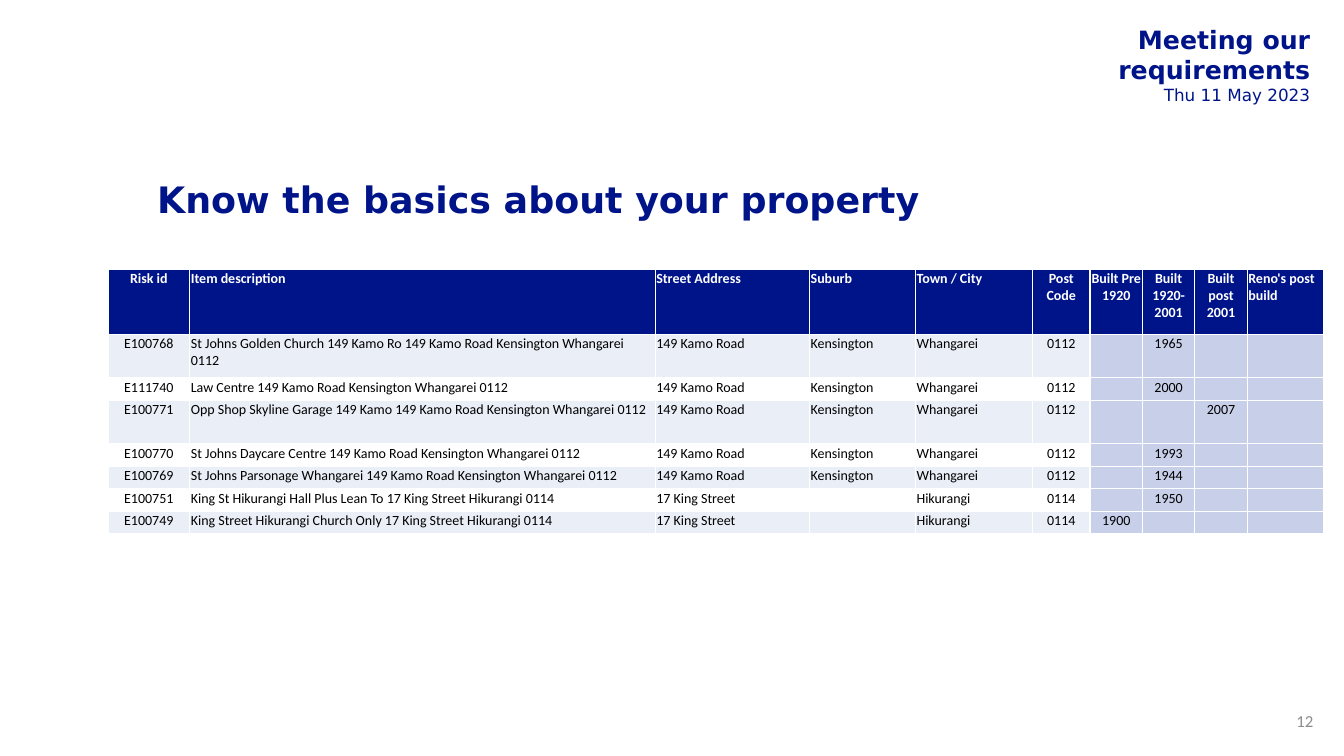
from lxml.etree import SubElement as Sub
from pptx import Presentation
from pptx.dml.color import RGBColor as RGB
from pptx.enum.text import MSO_ANCHOR as Anchor, PP_ALIGN as Align
from pptx.oxml.ns import qn
from pptx.util import Cm, Pt

NAVY = RGB(0x00, 0x14, 0x89)
WHITE = RGB(0xFF, 0xFF, 0xFF)
BLACK = RGB(0x00, 0x00, 0x00)
GREY = RGB(0x8C, 0x8C, 0x8C)
BAND = RGB(0xEA, 0xEF, 0xF7)
BLUE = RGB(0xC7, 0xCF, 0xE9)

deck = Presentation()
deck.slide_width, deck.slide_height = Cm(33.87), Cm(19.05)
slide = deck.slides.add_slide(deck.slide_layouts[6])


def style(para, face, size, color, bold=False, align=Align.LEFT):
    para.alignment = align
    for run in para.runs:
        font = run.font
        font.name, font.size, font.bold = face, Pt(size), bold
        font.color.rgb = color


def add_text(text, left, top, width, height, anchor=Anchor.MIDDLE):
    box = slide.shapes.add_textbox(Cm(left), Cm(top), Cm(width), Cm(height))
    frame = box.text_frame
    frame.word_wrap, frame.vertical_anchor = True, anchor
    frame.text = text
    return frame


# Meeting name and date, top right
head = add_text("Meeting our requirements\nThu 11 May 2023",
                23.42, 0.51, 9.78, 2.24, Anchor.TOP)
head.margin_left, head.margin_right = Cm(0.5), Cm(0.18)
head.margin_top = head.margin_bottom = Cm(0.1)
name, date = head.paragraphs
style(name, "DejaVu Sans", 18, NAVY, True, Align.RIGHT)
style(date, "DejaVu Sans", 12, NAVY, False, Align.RIGHT)

# Title
title = add_text("Know the basics about your property", 3.71, 3.81, 28.45, 2.57)
title.paragraphs[0].line_spacing = 0.9
style(title.paragraphs[0], "DejaVu Sans", 26, NAVY, True)

# Slide number
page = add_text("12", 32.28, 17.65, 1.07, 1.02)
style(page.paragraphs[0], "Calibri", 12, GREY, align=Align.RIGHT)

# Property table: the last four columns hold the building dates
KAMO = ["149 Kamo Road", "Kensington", "Whangarei", "0112"]
KING = ["17 King Street", "", "Hikurangi", "0114"]
rows = [
    ["Risk id", "Item description", "Street Address", "Suburb", "Town / City",
     "Post Code", "Built Pre 1920", "Built 1920-2001", "Built post 2001",
     "Reno's post build"],
    ["E100768", "St Johns Golden Church 149 Kamo Ro 149 Kamo Road Kensington "
     "Whangarei 0112", *KAMO, "", "1965", "", ""],
    ["E111740", "Law Centre 149 Kamo Road Kensington Whangarei 0112",
     *KAMO, "", "2000", "", ""],
    ["E100771", "Opp Shop Skyline Garage 149 Kamo 149 Kamo Road Kensington "
     "Whangarei 0112", *KAMO, "", "", "2007", ""],
    ["E100770", "St Johns Daycare Centre 149 Kamo Road Kensington Whangarei 0112",
     *KAMO, "", "1993", "", ""],
    ["E100769", "St Johns Parsonage Whangarei 149 Kamo Road Kensington "
     "Whangarei 0112", *KAMO, "", "1944", "", ""],
    ["E100751", "King St Hikurangi Hall Plus Lean To 17 King Street Hikurangi 0114",
     *KING, "", "1950", "", ""],
    ["E100749", "King Street Hikurangi Church Only 17 King Street Hikurangi 0114",
     *KING, "1900", "", "", ""],
]
wide = [2.06, 11.73, 3.89, 2.67, 2.95, 1.45, 1.32, 1.32, 1.32, 1.93]
tall = [1.65, 1.09, 0.57, 1.09, 0.57, 0.57, 0.57, 0.57]
MID = {0, 5, 6, 7, 8}  # centred columns

table = slide.shapes.add_table(len(rows), len(wide), Cm(2.72), Cm(6.78),
                               Cm(sum(wide)), Cm(sum(tall))).table
for col, width in zip(table.columns, wide):
    col.width = Cm(width)
for row, height in zip(table.rows, tall):
    row.height = Cm(height)

for r, row in enumerate(rows):
    for c, text in enumerate(row):
        cell = table.cell(r, c)
        cell.margin_left = cell.margin_right = cell.margin_top = Cm(0.03)
        cell.margin_bottom = 0
        cell.text = text
        para = cell.text_frame.paragraphs[0]
        style(para, "Calibri", 10, BLACK if r else WHITE, r == 0,
              Align.CENTER if c in MID else Align.LEFT)
        if not text:  # keeps empty cells as low as the others
            Sub(para._p, qn("a:endParaRPr"), sz="1000")

        # White grid lines, placed ahead of the fill
        props = cell._tc.get_or_add_tcPr()
        for side in ("lnL", "lnR", "lnT", "lnB"):
            line = Sub(props, qn("a:" + side), w=str(Pt(1)))
            Sub(Sub(line, qn("a:solidFill")), qn("a:srgbClr"), val=str(WHITE))

        # Header, date columns, then banding on odd rows
        fill = NAVY if r == 0 else BLUE if c > 5 else BAND if r % 2 else None
        if fill is None:
            cell.fill.background()
        else:
            cell.fill.solid()
            cell.fill.fore_color.rgb = fill

deck.save("out.pptx")
